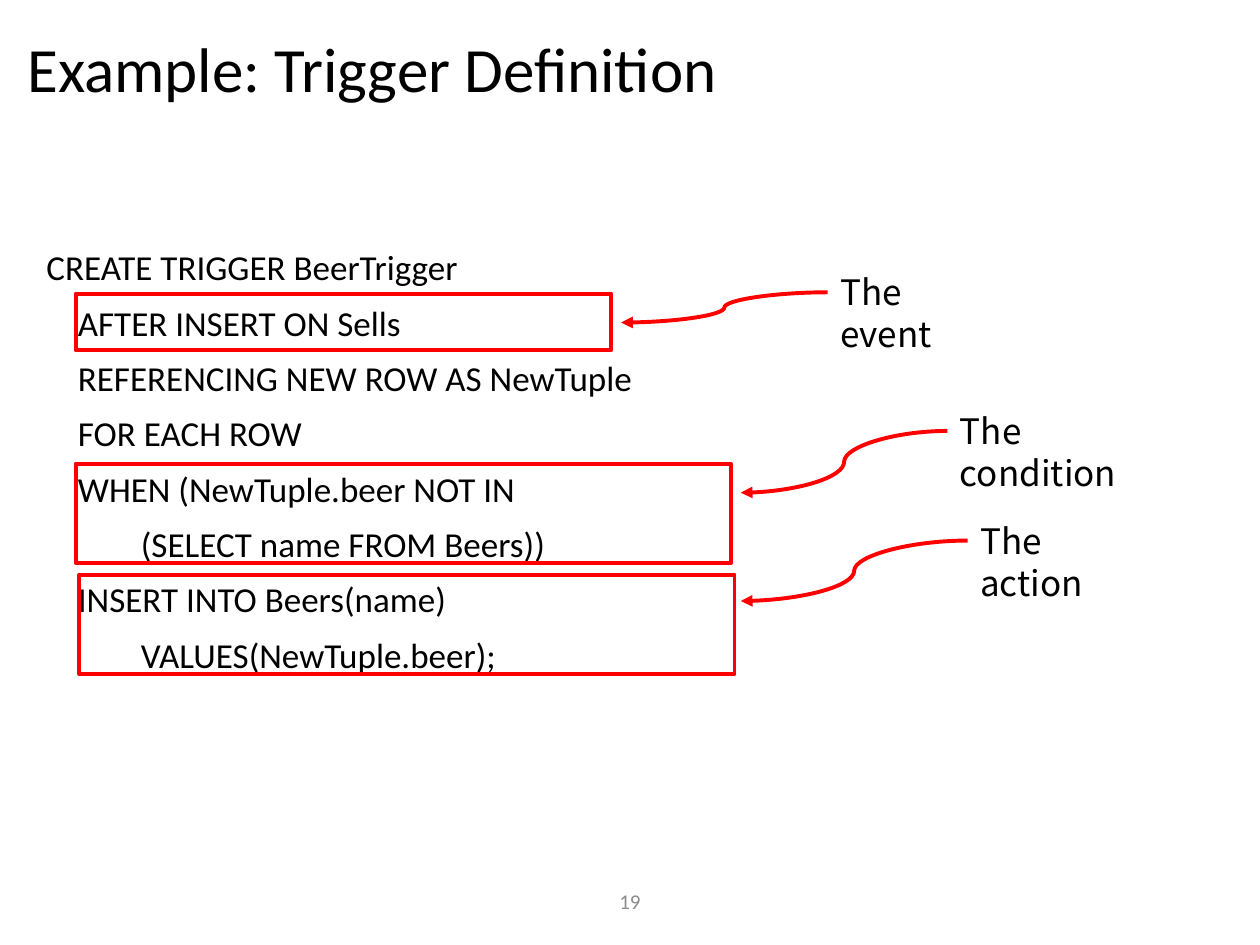
from dataclasses import dataclass

from lxml.etree import SubElement
from pptx import Presentation
from pptx.dml.color import RGBColor
from pptx.enum.shapes import MSO_CONNECTOR, MSO_SHAPE
from pptx.enum.text import MSO_ANCHOR, PP_ALIGN
from pptx.oxml.ns import qn
from pptx.util import Inches, Pt


@dataclass(frozen=True)
class Theme:
    ink: RGBColor = RGBColor(0, 0, 0)
    gray: RGBColor = RGBColor(0x8C, 0x8C, 0x8C)
    red: RGBColor = RGBColor(0xFF, 0, 0)
    font: str = "Calibri"
    note: str = "Noto Sans CJK KR"
    head: int = 36
    body: int = 20
    foot: int = 12
    line: float = 2.25


THEME = Theme()
CODE = [
    "CREATE TRIGGER BeerTrigger",
    "\tAFTER INSERT ON Sells",
    "\tREFERENCING NEW ROW AS NewTuple",
    "\tFOR EACH ROW",
    "\tWHEN (NewTuple.beer NOT IN",
    "\t\t(SELECT name FROM Beers))",
    "\tINSERT INTO Beers(name)",
    "\t\tVALUES(NewTuple.beer);",
]
PARTS = [
    ("The event", (6.57, 2.1, 1.44, 0.43), (0.6, 2.33, 4.25, 0.45), (4.93, 2.56)),
    ("The condition", (7.52, 3.2, 1.87, 0.43), (0.6, 3.68, 5.2, 0.79), (5.88, 3.91)),
    ("The action", (7.68, 4.07, 1.5, 0.43), (0.63, 4.56, 5.2, 0.79), (5.88, 4.77)),
]


def add_text(slide, area, lines, size, font=THEME.font, color=THEME.ink,
             anchor=MSO_ANCHOR.TOP):
    frame = slide.shapes.add_textbox(*map(Inches, area)).text_frame
    frame.word_wrap = True
    frame.vertical_anchor = anchor
    frame.text = "\n".join(lines)
    for para in frame.paragraphs:
        para.font.name = font
        para.font.size = Pt(size)
        para.font.color.rgb = color
    return frame.paragraphs


def add_code(slide):
    paras = add_text(slide, (0.27, 1.94, 6.06, 3.54), CODE, THEME.body)
    for para in paras:
        para.line_spacing = 0.9
        para.space_before = Pt(10)
        props = para._p.get_or_add_pPr()
        props.set("marL", str(Inches(0.25)))
        props.set("indent", str(Inches(-0.25)))


def add_frame(slide, area):
    box = slide.shapes.add_shape(MSO_SHAPE.RECTANGLE, *map(Inches, area))
    box.shadow.inherit = False
    box.fill.background()
    box.line.color.rgb = THEME.red
    box.line.width = Pt(THEME.line)


def add_arrow(slide, start, end):
    arrow = slide.shapes.add_connector(
        MSO_CONNECTOR.CURVE, *map(Inches, start + end))
    arrow.line.color.rgb = THEME.red
    arrow.line.width = Pt(THEME.line)
    SubElement(arrow.line._get_or_add_ln(), qn("a:tailEnd"), type="triangle")
    SubElement(arrow._element.spPr, qn("a:effectLst"))


def add_part(slide, label, area, frame, tip):
    left, top = area[:2]
    add_frame(slide, frame)
    add_text(slide, area, [label], THEME.body, THEME.note)
    add_arrow(slide, (left, top + 0.22), tip)


def main():
    deck = Presentation()
    deck.slide_width, deck.slide_height = Inches(10), Inches(7.5)
    slide = deck.slides.add_slide(deck.slide_layouts[6])
    foot = add_text(slide, (3.31, 6.95, 3.38, 0.4), ["19"], THEME.foot,
                    color=THEME.gray, anchor=MSO_ANCHOR.MIDDLE)
    foot[0].alignment = PP_ALIGN.CENTER
    title = add_text(slide, (0.12, 0.08, 9.76, 0.99),
                     ["Example: Trigger Definition"], THEME.head,
                     anchor=MSO_ANCHOR.MIDDLE)
    title[0].line_spacing = 0.9
    add_code(slide)
    for part in PARTS:
        add_part(slide, *part)
    deck.save("out.pptx")


if __name__ == "__main__":
    main()
